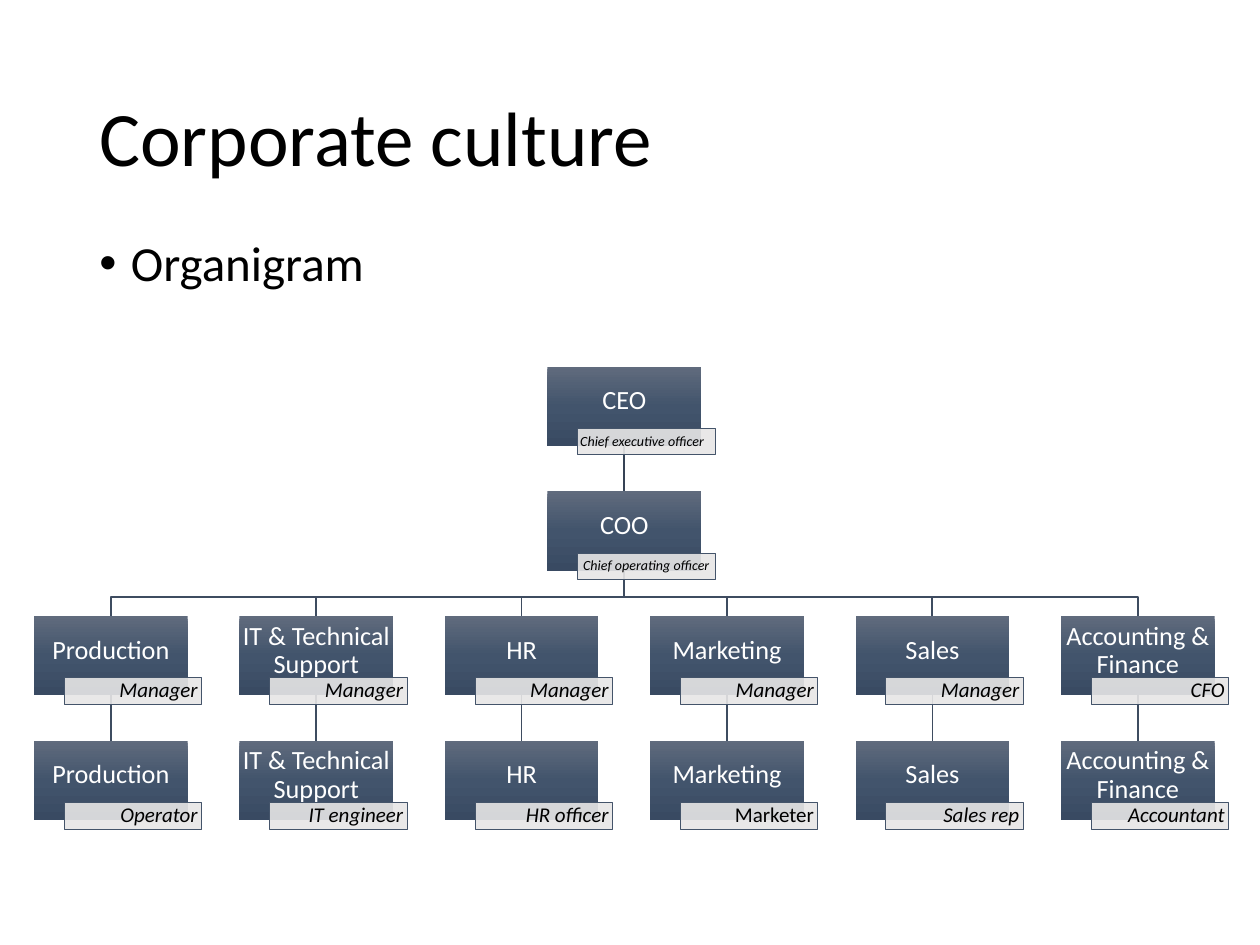
from dataclasses import dataclass
from copy import deepcopy

from lxml import etree
from pptx import Presentation
from pptx.dml.color import RGBColor
from pptx.enum import shapes, text
from pptx.oxml import ns
from pptx.util import Inches, Pt


@dataclass(frozen=True)
class Theme:
    font: str = "Calibri"
    ink: str = "000000"
    unit_ink: str = "FFFFFF"
    unit_gradient: tuple = ((0, "606B7D"), (0.5, "42546C"), (1, "394A62"))
    role_fill: str = "E7E6E6"
    role_alpha: str = "90000"
    role_line: str = "44546A"
    trunk: str = "364355"
    branch: str = "3E4C60"
    title_size: int = 44
    body_size: int = 28
    unit_size: int = 15
    role_size: int = 12
    officer_size: int = 8


THEME = Theme()
LEFT, CENTER, RIGHT = text.PP_ALIGN.LEFT, text.PP_ALIGN.CENTER, text.PP_ALIGN.RIGHT

# Organigram measures
UNIT_W, UNIT_H = Inches(1.22), Inches(0.63)
COLUMN_PITCH, ROW_PITCH = Inches(1.63), Inches(0.99)
ROLE_DX, ROLE_DY = Inches(0.24), Inches(0.49)
ROLE_W, ROLE_H = Inches(1.09), Inches(0.21)
BUS_DROP = Inches(0.21)

# Unit, role, alignment of the role
OFFICERS = [
    ("CEO", "Chief executive officer", LEFT),
    ("COO", "Chief operating officer", CENTER),
]
# Department, head, staff
DEPARTMENTS = [
    ("Production", "Manager", "Operator"),
    ("IT & Technical Support", "Manager", "IT engineer"),
    ("HR", "Manager", "HR officer"),
    ("Marketing", "Manager", "Marketer"),
    ("Sales", "Manager", "Sales rep"),
    ("Accounting & Finance", "Manager", "Accountant"),
]
FINANCE_HEAD = "CFO"
UPRIGHT_ROLES = {"Marketer"}


def rgb(value):
    return RGBColor.from_string(value)


def write(frame, words, size, color, align=LEFT, italic=False, insets=None):
    """Fill a text frame with one paragraph and return the paragraph."""
    frame.word_wrap = True
    if insets:
        (frame.margin_left, frame.margin_top,
         frame.margin_right, frame.margin_bottom) = map(Inches, insets)
    line = frame.paragraphs[0]
    line.text = words
    line.alignment = align
    line.line_spacing = 0.9
    line.font.name, line.font.size = THEME.font, Pt(size)
    line.font.color.rgb = rgb(color)
    line.font.italic = italic
    return line


def add_title(slide, left, top, width, height):
    frame = slide.shapes.add_textbox(left, top, width, height).text_frame
    frame.vertical_anchor = text.MSO_ANCHOR.MIDDLE
    write(frame, "Corporate culture", THEME.title_size, THEME.ink)


def add_body(slide, left, top, width, height):
    frame = slide.shapes.add_textbox(left, top, width, height).text_frame
    topic = write(frame, "Organigram", THEME.body_size, THEME.ink)
    topic.space_before = Pt(10)
    props = topic._p.get_or_add_pPr()
    props.set("marL", str(Inches(0.25)))
    props.set("indent", str(-Inches(0.25)))
    bullet_font = etree.SubElement(props, ns.qn("a:buFont"))
    bullet_font.set("typeface", "Arial")
    etree.SubElement(props, ns.qn("a:buChar")).set("char", "•")


def add_rect(slide, left, top, width, height):
    rect = slide.shapes.add_shape(shapes.MSO_SHAPE.RECTANGLE, left, top, width, height)
    rect.shadow.inherit = False
    rect.text_frame.vertical_anchor = text.MSO_ANCHOR.MIDDLE
    return rect


def fill_gradient(shape, colors):
    shape.fill.gradient()
    shape.fill.gradient_angle = 270
    stop_list = next(shape._element.spPr.iter(ns.qn("a:gsLst")))
    stop_list.insert(1, deepcopy(stop_list[0]))
    for stop, (position, color) in zip(shape.fill.gradient_stops, colors):
        stop.position = position
        stop.color.rgb = rgb(color)


def add_unit(slide, left, top, unit, role, size, align, role_inset):
    """A unit box with its role tag over the lower right corner."""
    box = add_rect(slide, left, top, UNIT_W, UNIT_H)
    fill_gradient(box, THEME.unit_gradient)
    box.line.fill.background()
    write(box.text_frame, unit, THEME.unit_size, THEME.unit_ink, CENTER,
          insets=(0.01, 0.01, 0.01, 0.09))

    tag = add_rect(slide, left + ROLE_DX, top + ROLE_DY, ROLE_W, ROLE_H)
    tag.fill.solid()
    tag.fill.fore_color.rgb = rgb(THEME.role_fill)
    tint = tag._element.spPr.find(ns.qn("a:solidFill"))[0]
    etree.SubElement(tint, ns.qn("a:alpha")).set("val", THEME.role_alpha)
    tag.line.color.rgb = rgb(THEME.role_line)
    tag.line.width = Pt(0.5)
    write(tag.text_frame, role, size, THEME.ink, align,
          italic=role not in UPRIGHT_ROLES,
          insets=(role_inset, 0.01, role_inset, 0.01))


def add_link(slide, x, top, bottom, color):
    link = slide.shapes.add_connector(shapes.MSO_CONNECTOR.STRAIGHT, x, top, x, bottom)
    link.line.color.rgb = rgb(color)
    link.line.width = Pt(1)
    etree.SubElement(link._element.spPr, ns.qn("a:effectLst"))


def add_branch(slide, start_x, top, end_x, bottom):
    """An elbow line that turns at the shared horizontal level."""
    bus = top + BUS_DROP
    outline = slide.shapes.build_freeform(start_x, top)
    outline.add_line_segments([(start_x, bus), (end_x, bus), (end_x, bottom)], close=False)
    branch = outline.convert_to_shape()
    branch.shadow.inherit = False
    branch.fill.background()
    branch.line.color.rgb = rgb(THEME.branch)
    branch.line.width = Pt(1)


def add_organigram(slide, left, top):
    columns = [left + i * COLUMN_PITCH for i in range(len(DEPARTMENTS))]
    ceo_y, coo_y, head_y, staff_y = [top + i * ROW_PITCH for i in range(4)]
    officer_x = (columns[0] + columns[-1]) // 2
    half = UNIT_W // 2

    # Lines, behind the boxes
    for x in columns:
        add_link(slide, x + half, head_y + UNIT_H, staff_y, THEME.branch)
        add_branch(slide, officer_x + half, coo_y + UNIT_H, x + half, head_y)
    add_link(slide, officer_x + half, ceo_y + UNIT_H, coo_y, THEME.trunk)

    # Officers
    for y, (unit, role, align) in zip((ceo_y, coo_y), OFFICERS):
        add_unit(slide, officer_x, y, unit, role, THEME.officer_size, align, 0.02)

    # Departments
    for x, (unit, head, staff) in zip(columns, DEPARTMENTS):
        if unit == "Accounting & Finance":
            head = FINANCE_HEAD
        for y, role in ((head_y, head), (staff_y, staff)):
            add_unit(slide, x, y, unit, role, THEME.role_size, RIGHT, 0.03)


def main():
    deck = Presentation()
    deck.slide_width, deck.slide_height = Inches(10), Inches(7.5)
    slide = deck.slides.add_slide(deck.slide_layouts[6])
    add_title(slide, Inches(0.69), Inches(0.4), Inches(8.62), Inches(1.45))
    add_body(slide, Inches(0.69), Inches(1.85), Inches(8.62), Inches(4.91))
    add_organigram(slide, Inches(0.27), Inches(2.91))
    deck.save("out.pptx")


if __name__ == "__main__":
    main()
